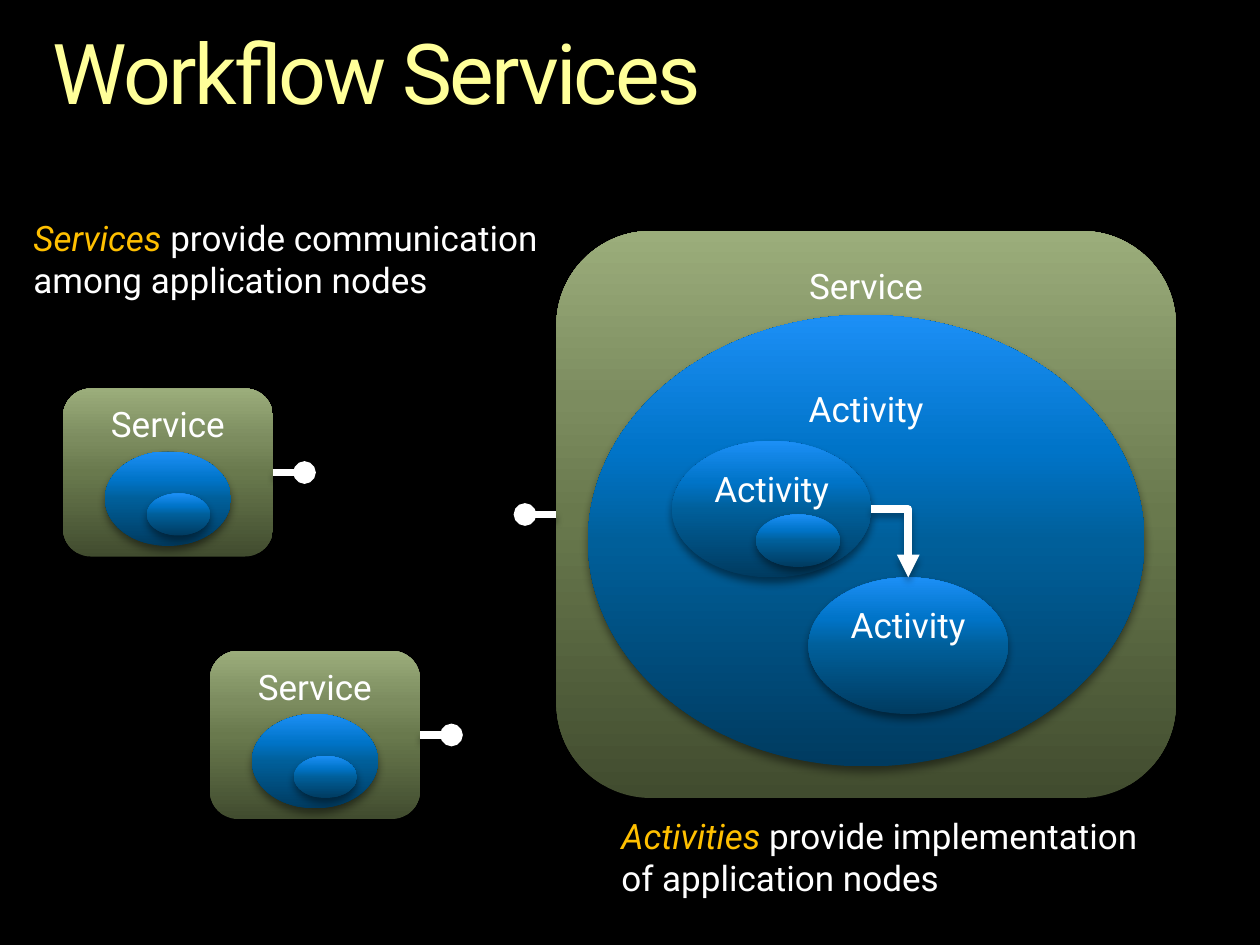
from dataclasses import dataclass, field
from typing import NamedTuple

from lxml.etree import SubElement
from pptx import Presentation
from pptx.dml.color import RGBColor
from pptx.enum.shapes import MSO_CONNECTOR, MSO_SHAPE
from pptx.enum.text import MSO_ANCHOR, PP_ALIGN
from pptx.oxml.ns import qn
from pptx.util import Pt

EMU_PER_PX = 7620


class Stop(NamedTuple):
    percent: int
    color: str


@dataclass(frozen=True)
class Theme:
    font: str = "Roboto"
    background: str = "000000"
    title: str = "FFFF99"
    text: str = "FFFFFF"
    accent: str = "FFC000"
    shadow: str = "000000"
    title_size: int = 48
    body_size: int = 20
    line_width: float = 4.33
    service: tuple = (Stop(0, "414C2F"), Stop(50, "69794D"), Stop(70, "7C8C5F"), Stop(100, "9BAD7B"))
    activity: tuple = (Stop(0, "003B60"), Stop(50, "005F9A"), Stop(70, "0074C8"), Stop(100, "1C8FF6"))


THEME = Theme()


class Box(NamedTuple):
    left: int
    top: int
    width: int
    height: int


@dataclass(frozen=True)
class Node:
    box: Box
    label: str = ""
    geometry: MSO_SHAPE = MSO_SHAPE.OVAL
    stops: tuple = field(default=THEME.activity)


class Link(NamedTuple):
    begin: tuple[int, int]
    end: tuple[int, int]
    tail: str = "oval"
    bent: bool = False


class Caption(NamedTuple):
    box: Box
    term: str
    rest: str


def service(box: Box) -> Node:
    return Node(box, "Service", MSO_SHAPE.ROUNDED_RECTANGLE, THEME.service)


def small_service(left: int, top: int) -> list[Node]:
    return [
        service(Box(left, top, 200, 160)),
        Node(Box(left + 40, top + 60, 120, 90)),
        Node(Box(left + 80, top + 100, 60, 40)),
    ]


NODES = [
    *small_service(60, 370),
    *small_service(200, 620),
    service(Box(530, 220, 590, 540)),
    Node(Box(560, 300, 530, 430), "Activity"),
    Node(Box(640, 420, 190, 130), "Activity"),
    Node(Box(770, 550, 190, 130), "Activity"),
    Node(Box(720, 490, 80, 50)),
]
LINKS = [
    Link((830, 485), (865, 550), "triangle", True),
    Link((260, 450), (290, 450)),
    Link((400, 700), (430, 700)),
    Link((530, 490), (500, 490)),
]
CAPTIONS = [
    Caption(Box(20, 200, 520, 92), "Services", " provide communication among application nodes"),
    Caption(Box(580, 770, 540, 92), "Activities", " provide implementation of application nodes"),
]


def px(*values: int) -> list[int]:
    return [value * EMU_PER_PX for value in values]


def style_span(span, size: int, color: str, italic: bool = False) -> None:
    span.font.name = THEME.font
    span.font.size = Pt(size)
    span.font.italic = italic
    span.font.color.rgb = RGBColor.from_string(color)


def add_shadow(effects, opacity: int, blur: int) -> None:
    shadow = SubElement(effects, qn("a:outerShdw"), blurRad=str(Pt(blur)), dist=str(Pt(3)),
                        dir="5400000", rotWithShape="0")
    color = SubElement(shadow, qn("a:srgbClr"), val=THEME.shadow)
    SubElement(color, qn("a:alpha"), val=str(opacity * 1000))


def fill_gradient(shape, stops: tuple) -> None:
    shape.fill.gradient()
    shape.fill.gradient_angle = 90
    stop_list = shape._element.spPr.find(qn("a:gradFill")).find(qn("a:gsLst"))
    for old_stop in list(stop_list):
        stop_list.remove(old_stop)
    for stop in stops:
        item = SubElement(stop_list, qn("a:gs"), pos=str(stop.percent * 1000))
        SubElement(item, qn("a:srgbClr"), val=stop.color)


def draw_node(page, node: Node) -> None:
    shape = page.shapes.add_shape(node.geometry, *px(*node.box))
    fill_gradient(shape, node.stops)
    shape.line.fill.background()
    shape.shadow.inherit = False
    add_shadow(shape._element.spPr.find(qn("a:effectLst")), 45, 5)
    if node.label:
        frame = shape.text_frame
        frame.text = node.label
        frame.word_wrap = False
        frame.vertical_anchor = MSO_ANCHOR.TOP
        para = frame.paragraphs[0]
        para.alignment = PP_ALIGN.CENTER
        style_span(para.runs[0], THEME.body_size, THEME.text)


def draw_link(page, link: Link) -> None:
    kind = MSO_CONNECTOR.ELBOW if link.bent else MSO_CONNECTOR.STRAIGHT
    connector = page.shapes.add_connector(kind, *px(*link.begin, *link.end))
    connector.line.width = Pt(THEME.line_width)
    connector.line.color.rgb = RGBColor.from_string(THEME.text)
    properties = connector._element.spPr
    if link.bent:
        properties.find(qn("a:prstGeom")).set("prst", "bentConnector2")
    SubElement(properties.find(qn("a:ln")), qn("a:tailEnd"), type=link.tail)
    add_shadow(SubElement(properties, qn("a:effectLst")), 35, 4)


def draw_caption(page, caption: Caption) -> None:
    frame = page.shapes.add_textbox(*px(*caption.box)).text_frame
    frame.word_wrap = True
    frame.text = caption.term
    para = frame.paragraphs[0]
    para.add_run().text = caption.rest
    term, rest = para.runs
    style_span(term, THEME.body_size, THEME.accent, italic=True)
    style_span(rest, THEME.body_size, THEME.text)


def draw_title(page, text: str) -> None:
    frame = page.shapes.add_textbox(*px(50, 30, 1100, 88)).text_frame
    frame.word_wrap = True
    frame.margin_left = frame.margin_right = frame.margin_top = frame.margin_bottom = 0
    frame.text = text
    para = frame.paragraphs[0]
    para.line_spacing = 0.9
    span = para.runs[0]
    style_span(span, THEME.title_size, THEME.title)
    span.font._element.set("spc", "-150")


def main() -> None:
    deck = Presentation()
    deck.slide_width, deck.slide_height = px(1200, 900)
    page = deck.slides.add_slide(deck.slide_layouts[6])
    page.background.fill.solid()
    page.background.fill.fore_color.rgb = RGBColor.from_string(THEME.background)
    draw_title(page, "Workflow Services")
    for node in NODES:
        draw_node(page, node)
    for link in LINKS:
        draw_link(page, link)
    for caption in CAPTIONS:
        draw_caption(page, caption)
    deck.save("out.pptx")


if __name__ == "__main__":
    main()
